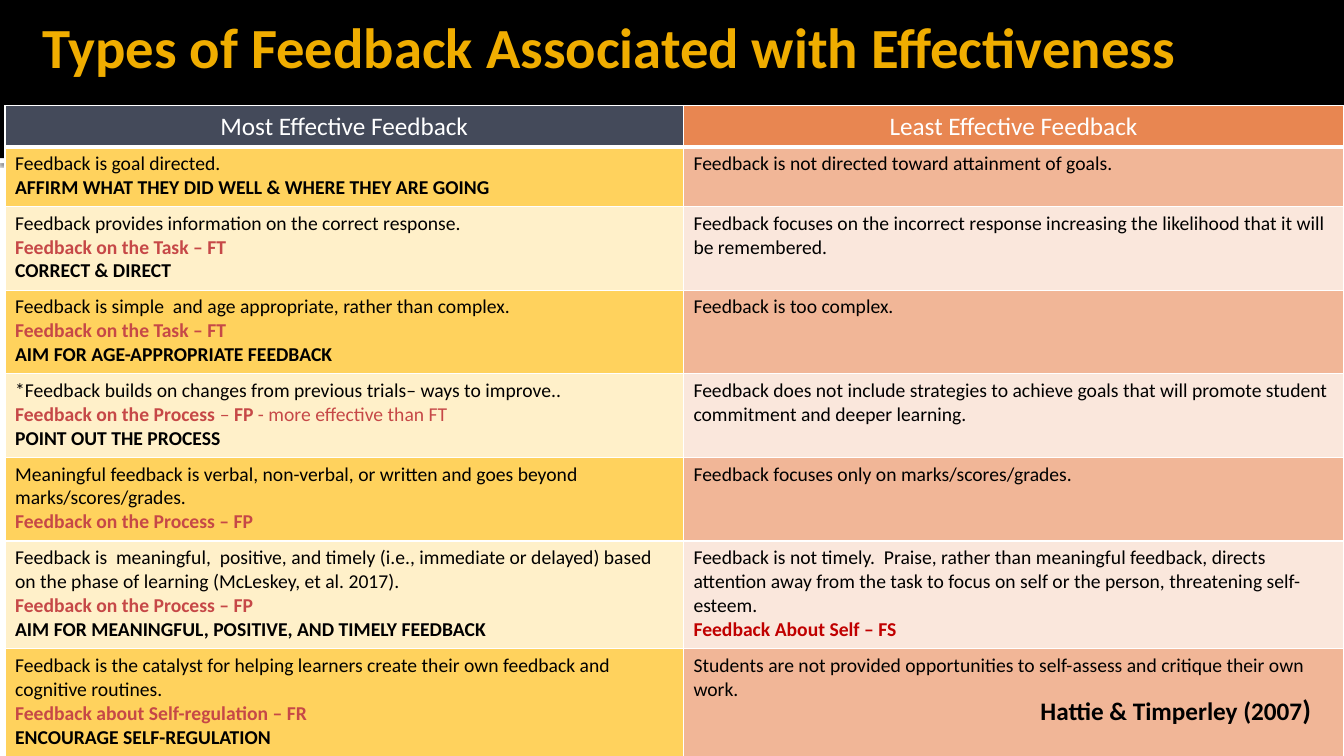
"""Build a slide that sets the most effective feedback beside the least effective."""
from dataclasses import dataclass
from typing import NamedTuple

import lxml.etree
import pptx
import pptx.dml.color
import pptx.enum.shapes
import pptx.enum.text
import pptx.oxml.ns
import pptx.util

Pt = pptx.util.Pt
ALIGN = pptx.enum.text.PP_ALIGN
ANCHOR = pptx.enum.text.MSO_ANCHOR


@dataclass(frozen=True)
class Theme:
    """Hold the colours and type sizes."""

    font: str = "Calibri"
    black: str = "000000"
    white: str = "FFFFFF"
    gold: str = "F0AD00"
    rose: str = "C64847"
    red: str = "C00000"
    heads: tuple = ("444A5A", "E88651")
    bands: tuple = (("FFD25D", "F1B697"), ("FFF0C9", "FAE7DC"))
    title: float = 40.5
    head: float = 18
    body: float = 14
    credit: float = 18
    bracket: float = 20


THEME = Theme()


class Box(NamedTuple):
    """Give a place and size in points."""

    left: float
    top: float
    width: float
    height: float

    def sides(self) -> tuple:
        """Return the four values as lengths."""
        return tuple(Pt(side) for side in self)


class Span(NamedTuple):
    """Describe a stretch of text in one style."""

    text: str
    tone: str = THEME.black
    bold: bool = False
    size: float = THEME.body


class Row(NamedTuple):
    """Describe one pair of cells as lists of lines."""

    height: float
    most: list
    least: list


class Bar(NamedTuple):
    """Describe a filled bar."""

    box: Box
    fill: str
    shade: bool


def plain(text: str) -> list:
    """Return a line in body style."""
    return [Span(text)]


def strong(text: str) -> list:
    """Return a bold black line."""
    return [Span(text, bold=True)]


def level(text: str, tone: str = THEME.rose) -> list:
    """Return a bold line that names a feedback level."""
    return [Span(text, tone, True)]


def head(text: str) -> list:
    """Return the one line of a header cell."""
    return [[Span(text, THEME.white, size=THEME.head)]]


PAGE = Box(0, 0, 960, 540)
TITLE = Box(23, 14.4, 927.4, 36.7)
GRID = Box(3.6, 75.6, 956.2, 465)
CREDIT = Box(720, 491, 239.8, 31.7)
COLUMNS = (484.6, 471.6)
THIN, THICK = 1, 3
BARS = (
    Bar(Box(0, 113, 960, 3.6), THEME.white, True),
    Bar(Box(0, 0, 960, 113), THEME.black, False),
)
ROWS = (
    Row(29.5, head("Most Effective Feedback"), head("Least Effective Feedback")),
    Row(42.5,
        [plain("Feedback is goal directed."),
         strong("AFFIRM WHAT THEY DID WELL & WHERE THEY ARE GOING")],
        [plain("Feedback is not directed toward attainment of goals.")]),
    Row(59.75,
        [plain("Feedback provides information on the correct response."),
         level("Feedback on the Task – FT"), strong("CORRECT & DIRECT")],
        [plain("Feedback focuses on the incorrect response increasing the likelihood that it will be remembered.")]),
    Row(59.75,
        [plain("Feedback is simple  and age appropriate, rather than complex."),
         level("Feedback on the Task – FT"), strong("AIM FOR AGE-APPROPRIATE FEEDBACK")],
        [plain("Feedback is too complex.")]),
    Row(59.75,
        [plain("*Feedback builds on changes from previous trials– ways to improve.."),
         [Span("Feedback on the Process", THEME.rose, True), Span(" –", THEME.rose),
          Span(" FP ", THEME.rose, True), Span("- more effective than FT", THEME.rose)],
         strong("POINT OUT THE PROCESS")],
        [plain("Feedback does not include strategies to achieve goals that will promote student "
               "commitment and deeper learning.")]),
    Row(59.75,
        [plain("Meaningful feedback is verbal, non-verbal, or written and goes beyond marks/scores/grades."),
         level("Feedback on the Process – FP")],
        [plain("Feedback focuses only on marks/scores/grades.")]),
    Row(77,
        [plain("Feedback is  meaningful,  positive, and timely (i.e., immediate or delayed) based "
               "on the phase of learning (McLeskey, et al. 2017)."),
         level("Feedback on the Process – FP"),
         strong("AIM FOR MEANINGFUL, POSITIVE, AND TIMELY FEEDBACK")],
        [plain("Feedback is not timely.  Praise, rather than meaningful feedback, directs attention "
               "away from the task to focus on self or the person, threatening self-esteem."),
         level("Feedback About Self – FS", THEME.red)]),
    Row(77,
        [plain("Feedback is the catalyst for helping learners create their own feedback and cognitive routines."),
         level("Feedback about Self-regulation – FR"), strong("ENCOURAGE SELF-REGULATION")],
        [plain("Students are not provided opportunities to self-assess and critique their own work.")]),
)


def tint(text: str) -> pptx.dml.color.RGBColor:
    """Return the colour for a hex text."""
    return pptx.dml.color.RGBColor.from_string(text)


def nest(parent, tag: str, **values: str):
    """Add a child element in the drawing namespace."""
    return lxml.etree.SubElement(parent, pptx.oxml.ns.qn(tag), **values)


def write(frame, lines: list, align=ALIGN.LEFT) -> None:
    """Fill a text frame with styled lines."""
    frame.text = "\n".join("" for line in lines)
    for para, line in zip(frame.paragraphs, lines):
        para.alignment = align
        for span in line:
            run = para.add_run()
            run.text = span.text
            run.font.name = THEME.font
            run.font.size = Pt(span.size)
            run.font.bold = span.bold
            run.font.color.rgb = tint(span.tone)


def draw_bar(slide, bar: Bar) -> None:
    """Draw a bar behind the title."""
    shape = slide.shapes.add_shape(pptx.enum.shapes.MSO_SHAPE.RECTANGLE, *bar.box.sides())
    shape.shadow.inherit = False
    shape.fill.solid()
    shape.fill.fore_color.rgb = tint(bar.fill)
    shape.line.fill.background()
    if bar.shade:
        effects = shape.element.spPr.find(pptx.oxml.ns.qn("a:effectLst"))
        shade = nest(effects, "a:outerShdw", blurRad=str(Pt(2.5)), dist=str(Pt(0.8)), dir="5400000")
        nest(nest(shade, "a:srgbClr", val=THEME.black), "a:alpha", val="60000")
    slide.shapes.title.element.addprevious(shape.element)


def draw_title(slide) -> None:
    """Place and write the title."""
    title = slide.shapes.title
    title.left, title.top, title.width, title.height = TITLE.sides()
    frame = title.text_frame
    frame.auto_size = pptx.enum.text.MSO_AUTO_SIZE.NONE
    frame.vertical_anchor = ANCHOR.MIDDLE
    frame.margin_right = Pt(3.6)
    write(frame, [[Span("Types of Feedback Associated with Effectiveness", THEME.gold, True, THEME.title)]])


def edge(cell, index: int) -> None:
    """Draw white borders, thick between header and body."""
    top = THICK if index == 1 else THIN
    base = THICK if index == 0 else THIN
    for tag, width in (("a:lnL", THIN), ("a:lnR", THIN), ("a:lnT", top), ("a:lnB", base)):
        line = nest(cell._tc.get_or_add_tcPr(), tag, w=str(Pt(width)))
        nest(nest(line, "a:solidFill"), "a:srgbClr", val=THEME.white)


def draw_grid(slide) -> None:
    """Draw the table of feedback types."""
    table = slide.shapes.add_table(len(ROWS), len(COLUMNS), *GRID.sides()).table
    for column, width in zip(table.columns, COLUMNS):
        column.width = Pt(width)
    for index, row in enumerate(ROWS):
        table.rows[index].height = Pt(row.height)
        fills = THEME.bands[(index - 1) % 2] if index else THEME.heads
        for place, (lines, fill) in enumerate(zip((row.most, row.least), fills)):
            cell = table.cell(index, place)
            edge(cell, index)
            cell.fill.solid()
            cell.fill.fore_color.rgb = tint(fill)
            cell.vertical_anchor = ANCHOR.TOP if index else ANCHOR.MIDDLE
            write(cell.text_frame, lines, ALIGN.LEFT if index else ALIGN.CENTER)


def draw_credit(slide) -> None:
    """Write the source of the findings."""
    frame = slide.shapes.add_textbox(*CREDIT.sides()).text_frame
    frame.word_wrap = True
    spans = [Span("Hattie & Timperley (2007", bold=True, size=THEME.credit),
             Span(")", bold=True, size=THEME.bracket)]
    write(frame, [spans], ALIGN.CENTER)


def main() -> None:
    """Build and save the deck."""
    deck = pptx.Presentation()
    deck.slide_width, deck.slide_height = Pt(PAGE.width), Pt(PAGE.height)
    slide = deck.slides.add_slide(deck.slide_layouts[5])
    for bar in BARS:
        draw_bar(slide, bar)
    draw_title(slide)
    draw_grid(slide)
    draw_credit(slide)
    deck.save("out.pptx")


if __name__ == "__main__":
    main()
